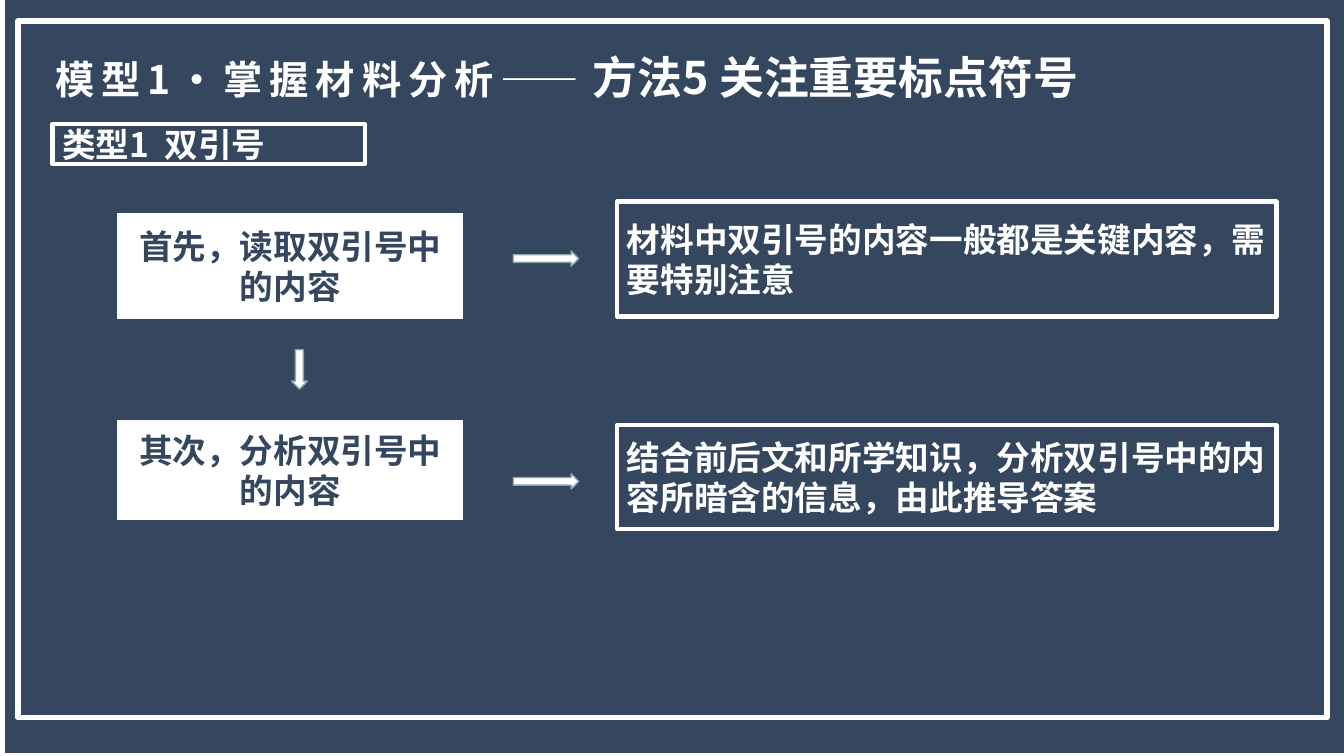
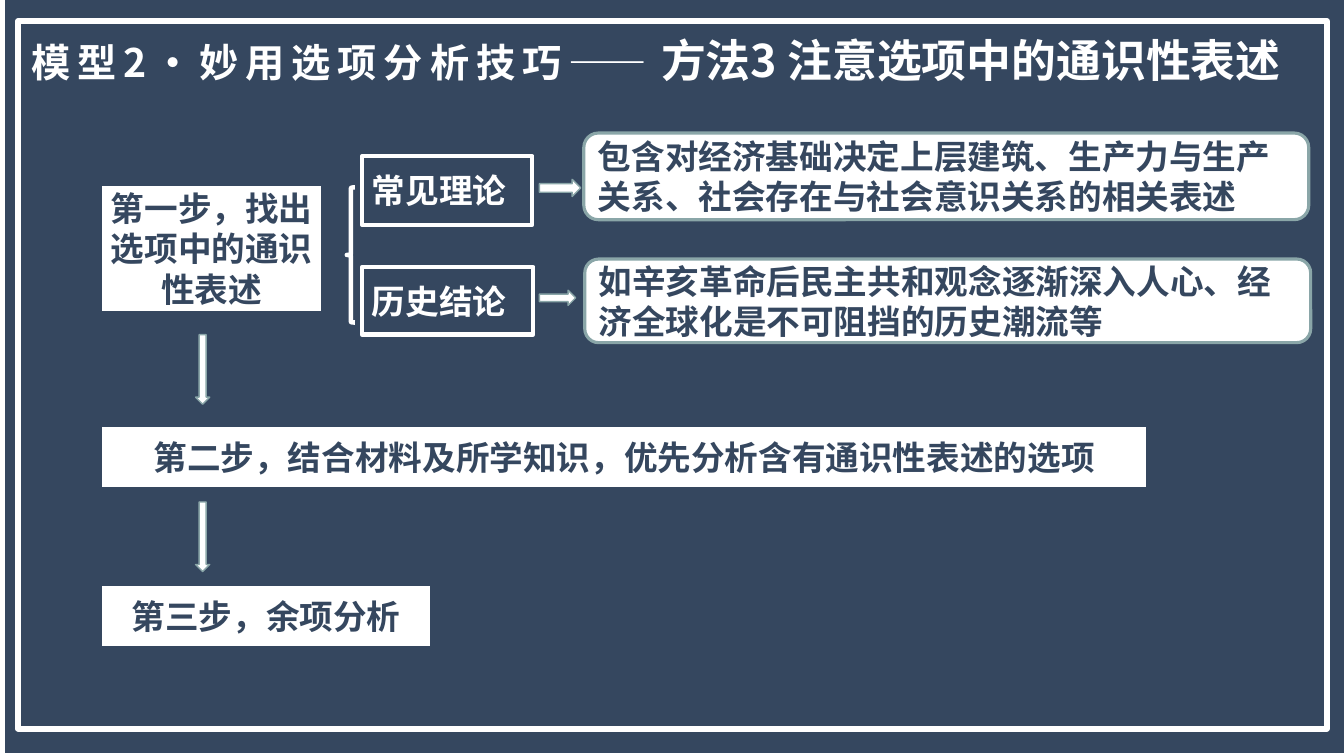
"""Two exam-method slides: reading quotation marks and general statements."""
from dataclasses import dataclass

from lxml import etree
from pptx import Presentation
from pptx.dml.color import RGBColor
from pptx.enum import shapes, text
from pptx.oxml import ns
from pptx.util import Emu, Pt

EMU_PER_PX = 9144
FORM = shapes.MSO_SHAPE


@dataclass(frozen=True)
class Theme:
    """Colours, font and type sizes of the deck."""
    navy: str = "35475F"
    white: str = "FFFFFF"
    sage: str = "8AA6A8"
    font: str = "Noto Sans CJK SC"
    model_size: int = 28
    method_size: int = 32
    body_size: int = 24
    model_spacing: int = 500


class Deck:
    """Draws the elements of the deck on the current slide."""

    def __init__(self, theme):
        """Start an empty widescreen presentation."""
        self.theme = theme
        self.prs = Presentation()
        self.prs.slide_width, self.prs.slide_height = self.emu(1333, 750)
        self.slide = None

    def emu(self, *lengths):
        """Turn px lengths into EMU."""
        return [Emu(length * EMU_PER_PX) for length in lengths]

    def shape(self, form, box, fill=None, line=None, weight=1):
        """Add a preset shape with its fill and outline."""
        shape = self.slide.shapes.add_shape(form, *self.emu(*box))
        shape.shadow.inherit = False
        if fill:
            shape.fill.solid()
            shape.fill.fore_color.rgb = RGBColor.from_string(fill)
        else:
            shape.fill.background()
        if line:
            shape.line.color.rgb = RGBColor.from_string(line)
            shape.line.width = Pt(weight)
        else:
            shape.line.fill.background()
        return shape

    def add_words(self, paragraph, words, size, color, spacing=0):
        """Add one bold run to a paragraph."""
        run = paragraph.add_run()
        run.text = words
        run.font.name = self.theme.font
        run.font.size = Pt(size)
        run.font.bold = True
        run.font.color.rgb = RGBColor.from_string(color)
        properties = run._r.get_or_add_rPr()
        properties.set("spc", str(spacing))
        east_asian = etree.Element(ns.qn("a:ea"), typeface=self.theme.font)
        properties.find(ns.qn("a:latin")).addnext(east_asian)

    def label(self, shape, words, color, align=text.PP_ALIGN.LEFT):
        """Put body text inside a shape."""
        frame = shape.text_frame
        frame.word_wrap = True
        frame.vertical_anchor = text.MSO_ANCHOR.MIDDLE
        paragraph = frame.paragraphs[0]
        paragraph.alignment = align
        self.add_words(paragraph, words, self.theme.body_size, color)

    def page(self, frame_height):
        """Open a slide with the navy ground and the white frame."""
        self.slide = self.prs.slides.add_slide(self.prs.slide_layouts[6])
        self.shape(FORM.RECTANGLE, (5, -3, 1333, 750), fill=self.theme.navy)
        self.shape(FORM.RECTANGLE, (18, 21, 1298, frame_height),
                   line=self.theme.white, weight=4)

    def title(self, box, model, method):
        """Add the title: spaced model name, then larger method name."""
        t = self.theme
        frame = self.slide.shapes.add_textbox(*self.emu(*box)).text_frame
        frame.word_wrap = True
        frame.auto_size = text.MSO_AUTO_SIZE.SHAPE_TO_FIT_TEXT
        paragraph = frame.paragraphs[0]
        self.add_words(paragraph, model, t.model_size, t.white, t.model_spacing)
        self.add_words(paragraph, method, t.method_size, t.white)

    def step(self, box, words):
        """Add a white step box with centred text."""
        t = self.theme
        shape = self.shape(FORM.RECTANGLE, box, t.white, t.navy, 2.25)
        self.label(shape, words, t.navy, text.PP_ALIGN.CENTER)

    def outlined(self, box, words):
        """Add an outlined box with white text."""
        t = self.theme
        shape = self.shape(FORM.RECTANGLE, box, line=t.white, weight=3)
        self.label(shape, words, t.white)

    def example(self, box, words):
        """Add a rounded white box with left-aligned text."""
        t = self.theme
        shape = self.shape(FORM.ROUNDED_RECTANGLE, box, t.white, t.sage, 2.25)
        self.label(shape, words, t.navy)

    def right_arrow(self, box):
        """Add a block arrow pointing right."""
        self.shape(FORM.RIGHT_ARROW, box, self.theme.white, self.theme.sage)

    def down_arrow(self, box):
        """Add a block arrow pointing down."""
        self.shape(FORM.DOWN_ARROW, box, self.theme.white, self.theme.sage)

    def brace(self, box):
        """Add a left brace."""
        self.shape(FORM.LEFT_BRACE, box, line=self.theme.white, weight=3.25)


def quotation_marks(deck):
    """Build the slide on double quotation marks."""
    deck.page(691)
    deck.title((45, 44, 1197, 111), "模型1·掌握材料分析——", "方法5 关注重要标点符号")
    deck.outlined((52, 123, 310, 40), "类型1  双引号")
    stages = [
        (210, 108, "首先，读取双引号中的内容",
         200, 114, "材料中双引号的内容一般都是关键内容，需要特别注意", 249),
        (415, 102, "其次，分析双引号中的内容",
         422, 103, "结合前后文和所学知识，分析双引号中的内容所暗含的信息，由此推导答案", 470),
    ]
    for step_top, step_height, step, note_top, note_height, note, arrow_top in stages:
        deck.step((115, step_top, 346, step_height), step)
        deck.right_arrow((509, arrow_top, 65, 15))
        deck.outlined((612, note_top, 654, note_height), note)
    deck.down_arrow((289, 347, 16, 39))


def general_statements(deck):
    """Build the slide on general statements in the options."""
    deck.page(702)
    deck.title((21, 28, 1265, 64), "模型2·妙用选项分析技巧——", "方法3 注意选项中的通识性表述")
    steps = [
        (183, 220, 127, "第一步，找出选项中的通识性表述"),
        (422, 1038, 63, "第二步，结合材料及所学知识，优先分析含有通识性表述的选项"),
        (580, 328, 63, "第三步，余项分析"),
    ]
    for top, width, height, words in steps:
        deck.step((100, top, width, height), words)
    for top in (332, 498):
        deck.down_arrow((194, top, 14, 69))
    deck.brace((344, 186, 8, 134))
    kinds = [
        ((359, 155, 169, 68), "常见理论", (535, 178, 41, 17), (579, 132, 719, 86),
         "包含对经济基础决定上层建筑、生产力与生产关系、社会存在与社会意识关系的相关表述"),
        ((359, 265, 170, 67), "历史结论", (535, 288, 36, 15), (580, 257, 720, 83),
         "如辛亥革命后民主共和观念逐渐深入人心、经济全球化是不可阻挡的历史潮流等"),
    ]
    for kind_box, kind, arrow_box, example_box, example in kinds:
        deck.outlined(kind_box, kind)
        deck.right_arrow(arrow_box)
        deck.example(example_box, example)


def main():
    """Build and save the deck."""
    deck = Deck(Theme())
    quotation_marks(deck)
    general_statements(deck)
    deck.prs.save("out.pptx")


if __name__ == "__main__":
    main()
